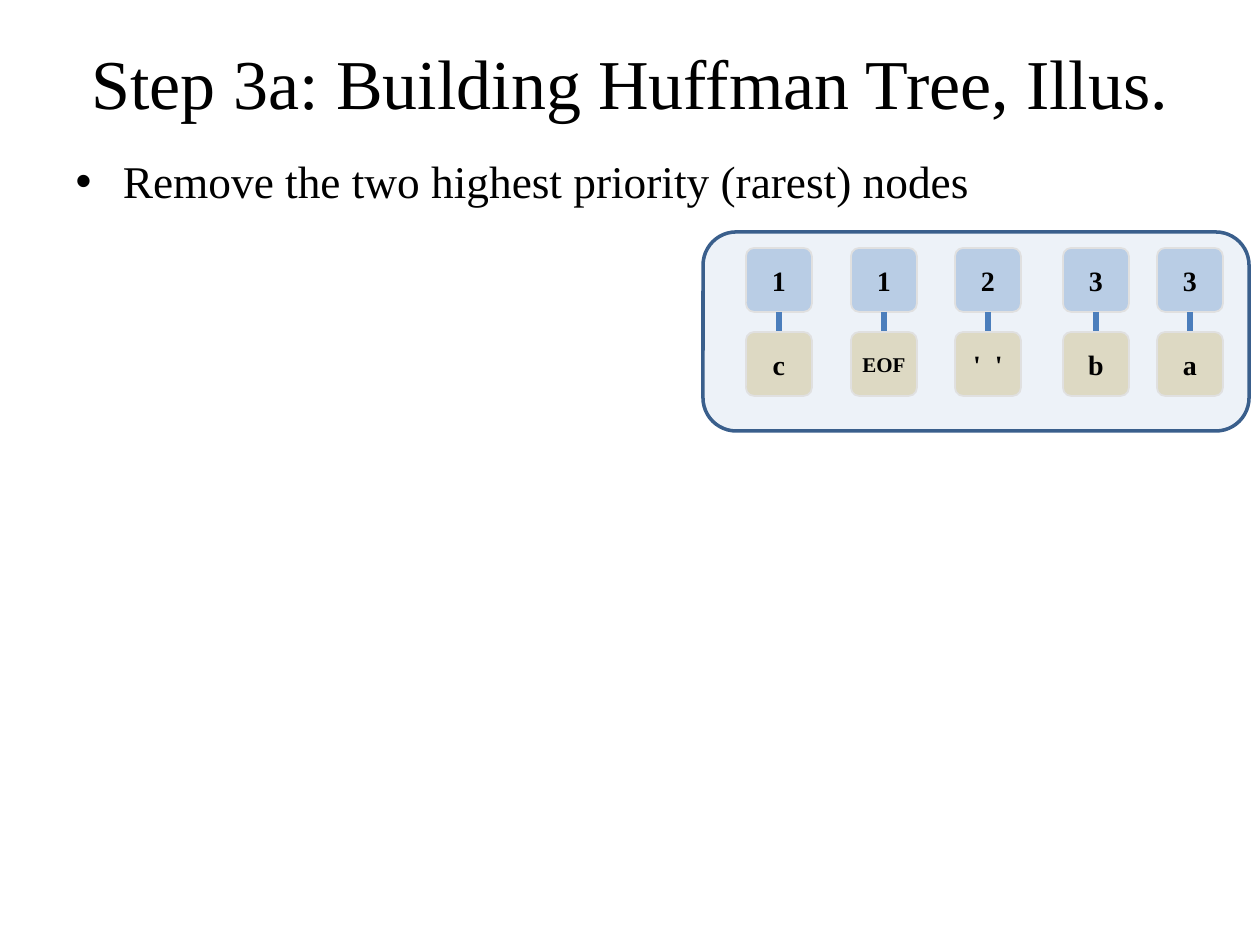
import pptx
import pptx.dml.color
import pptx.enum.shapes
import pptx.enum.text
import pptx.oxml
import pptx.oxml.ns
import pptx.util

FONT = "Times New Roman"
SCALE = 914400 / 126
NODE_W, NODE_H = 66, 64
COUNT_Y, SYMBOL_Y = 248, 332
NODES = [
    (746, "1", "c", 16),
    (851, "1", "EOF", 12),
    (955, "2", "'  '", 16),
    (1063, "3", "b", 16),
    (1157, "3", "a", 16),
]


def px(*values):
    return [pptx.util.Emu(round(v * SCALE)) for v in values]


def rgb(value):
    return pptx.dml.color.RGBColor.from_string(value)


def set_text(sp, text, size, bold=False):
    tf = sp.text_frame
    tf.text = text
    font = tf.paragraphs[0].runs[0].font
    font.name = FONT
    font.size = pptx.util.Pt(size)
    font.bold = bold
    font.color.rgb = rgb("000000")
    return tf


def fill_placeholder(sp, box, text, size):
    sp.left, sp.top, sp.width, sp.height = px(*box)
    tf = set_text(sp, text, size)
    tf.auto_size = pptx.enum.text.MSO_AUTO_SIZE.NONE


def add_box(shapes, box, fill, line, width):
    sp = shapes.add_shape(pptx.enum.shapes.MSO_SHAPE.ROUNDED_RECTANGLE, *px(*box))
    sp.shadow.inherit = False
    sp.fill.solid()
    sp.fill.fore_color.rgb = rgb(fill)
    sp.line.color.rgb = rgb(line)
    sp.line.width = pptx.util.Pt(width)
    return sp


def set_opacity(sp, percent):
    color = sp.fill._xPr.find(".//" + pptx.oxml.ns.qn("a:srgbClr"))
    alpha = pptx.oxml.parse_xml(
        f'<a:alpha {pptx.oxml.ns.nsdecls("a")} val="{percent * 1000}"/>'
    )
    color.append(alpha)


def add_cell(shapes, x, y, text, size, fill):
    sp = add_box(shapes, (x, y, NODE_W, NODE_H), fill, "E0E0E0", 1)
    sp.adjustments[0] = 0.13
    tf = set_text(sp, text, size, bold=True)
    tf.word_wrap = False
    tf.vertical_anchor = pptx.enum.text.MSO_ANCHOR.MIDDLE
    tf.paragraphs[0].alignment = pptx.enum.text.PP_ALIGN.CENTER


def add_link(shapes, x, top, bottom):
    line = shapes.add_connector(
        pptx.enum.shapes.MSO_CONNECTOR.STRAIGHT, *px(x, top, x, bottom)
    )
    line.line.color.rgb = rgb("4B7EBC")
    line.line.width = pptx.util.Pt(3.5)
    effects = pptx.oxml.parse_xml(f'<a:effectLst {pptx.oxml.ns.nsdecls("a")}/>')
    line._element.spPr.append(effects)


def add_node(slide, x, count, symbol, size):
    shapes = slide.shapes.add_group_shape().shapes
    add_cell(shapes, x, COUNT_Y, count, 16, "B9CDE5")
    add_link(shapes, x + NODE_W // 2, COUNT_Y + NODE_H, SYMBOL_Y)
    add_cell(shapes, x, SYMBOL_Y, symbol, size, "DDD9C3")


def main():
    prs = pptx.Presentation()
    prs.slide_width, prs.slide_height = px(1260, 945)
    slide = prs.slides.add_slide(prs.slide_layouts[1])
    title, body = slide.placeholders
    fill_placeholder(
        title, (63, 38, 1134, 88), "Step 3a: Building Huffman Tree, Illus.", 40
    )
    fill_placeholder(
        body, (63, 147, 1134, 63),
        "Remove the two highest priority (rarest) nodes", 25.9,
    )
    queue = add_box(slide.shapes, (703, 232, 546, 199), "4F81BD", "3A5F8C", 2)
    set_opacity(queue, 10)
    for node in NODES:
        add_node(slide, *node)
    prs.save("out.pptx")


if __name__ == "__main__":
    main()
